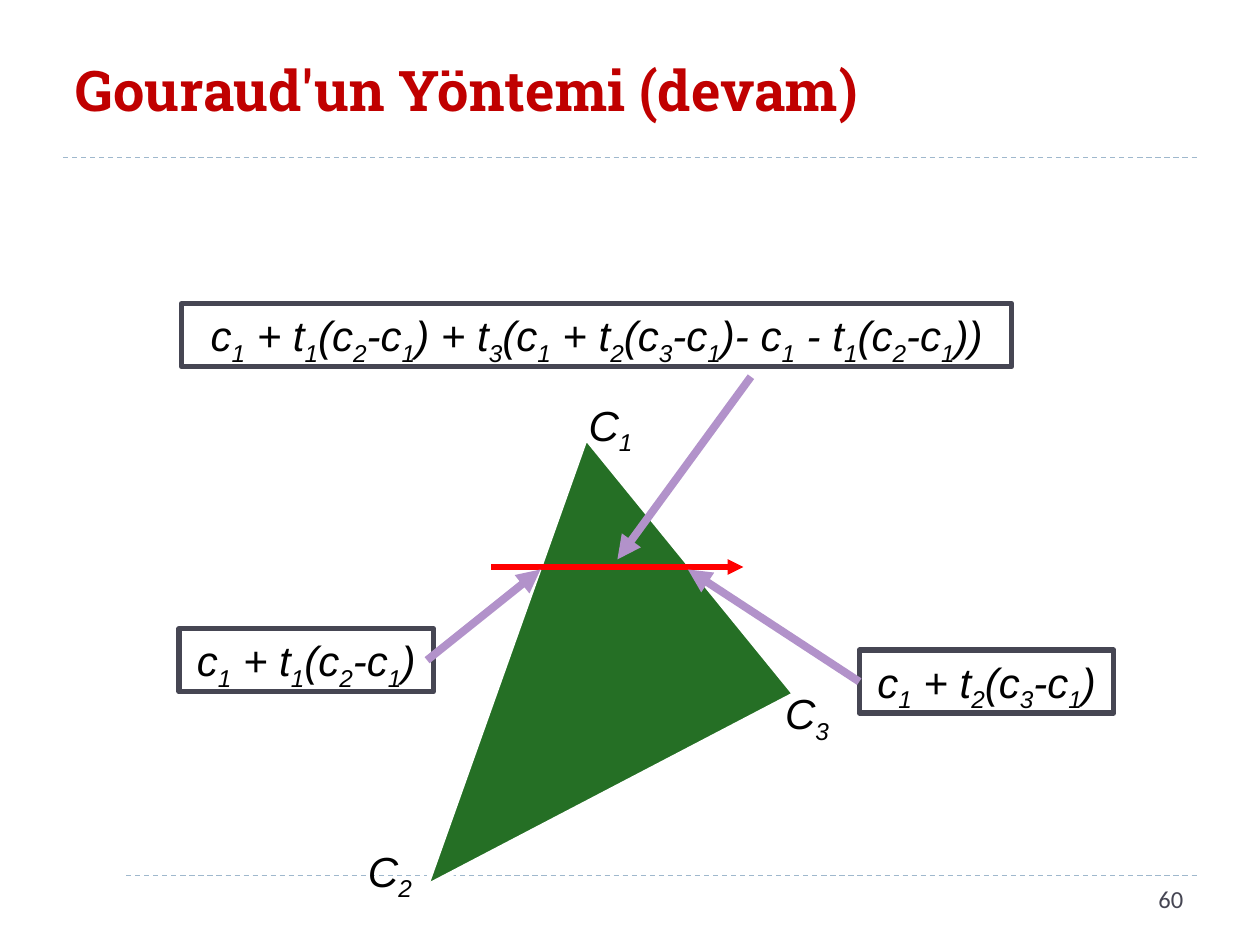
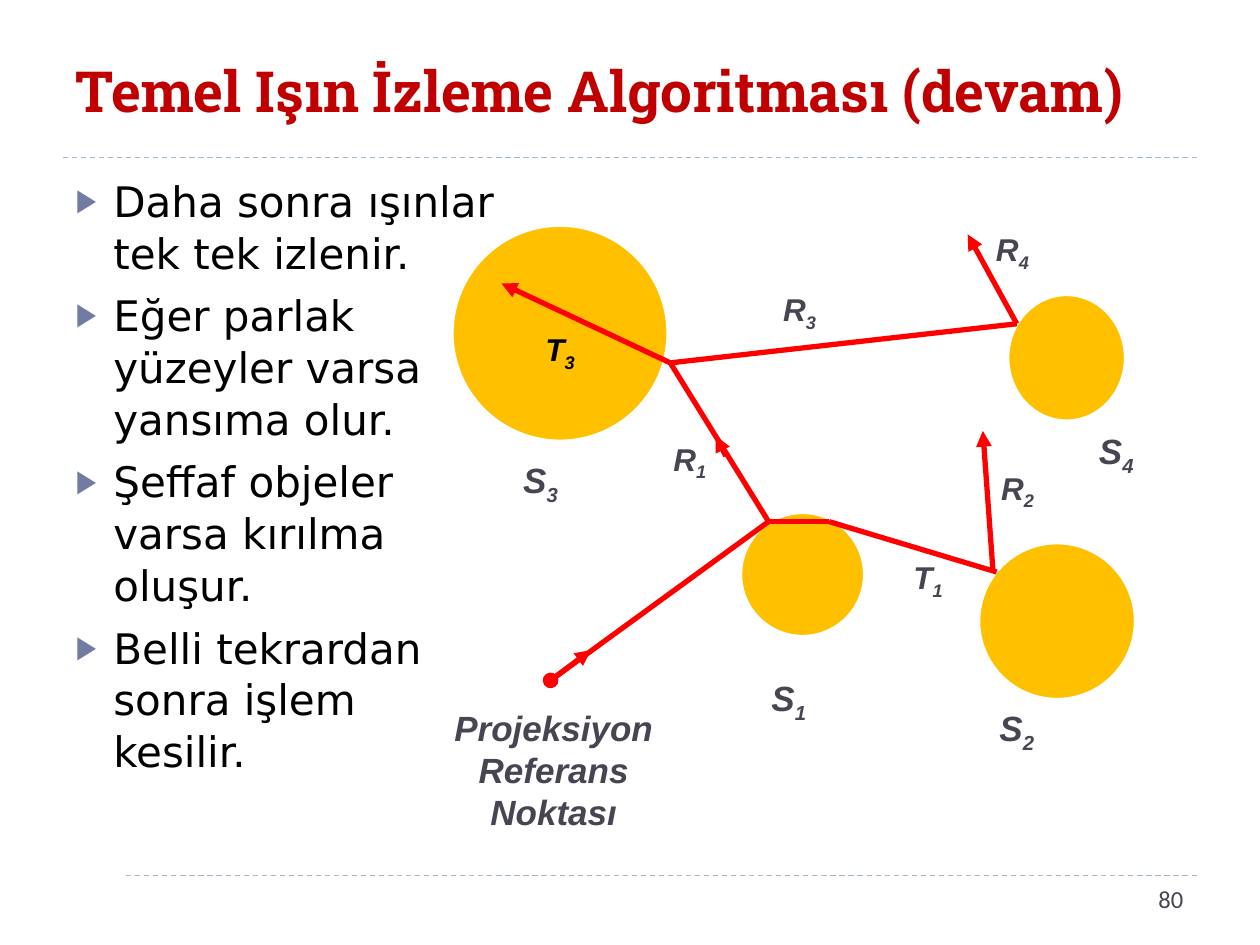
"""Build two computer graphics slides: Gouraud shading and basic ray tracing."""
import pptx
import pptx.util
import pptx.dml.color
import pptx.enum.dml
import pptx.enum.shapes
import pptx.enum.text
import pptx.oxml.ns
import lxml.etree

Inches, Pt = pptx.util.Inches, pptx.util.Pt
RGB = pptx.dml.color.RGBColor.from_string
SHAPE = pptx.enum.shapes.MSO_SHAPE
ALIGN = pptx.enum.text.PP_ALIGN
ANCHOR = pptx.enum.text.MSO_ANCHOR
qn = pptx.oxml.ns.qn
C = {"title": "C00000", "rule": "9FB8CD", "white": "FFFFFF", "slate": "464653",
     "black": "000000", "green": "256F25", "ray": "FF0000", "pointer": "B292CA",
     "sphere": "FFC000", "bullet": "727CA3"}


def write(sp, text, size, color="slate", font="Arial", bold=False, italic=False,
          align=ALIGN.CENTER, wrap=True):
    """Write text run by run; the character after each underscore is a subscript."""
    tf = sp.text_frame
    tf.word_wrap = wrap
    tf.auto_size = pptx.enum.text.MSO_AUTO_SIZE.NONE
    p = tf.paragraphs[0]
    p.alignment = align
    first, *rest = text.split("_")
    parts = [(first, False)]
    for part in rest:
        parts += [(part[0], True), (part[1:], False)]
    for part, lowered in parts:
        if part:
            r = p.add_run()
            r.text = part
            r.font.size, r.font.name = Pt(size), font
            r.font.bold, r.font.italic = bold, italic
            r.font.color.rgb = RGB(C[color])
            if lowered:
                r.font._element.set("baseline", "-25000")


def draw_line(s, start, end, color, width, head=None, tail=None):
    """Draw a straight line with optional end marks and return it."""
    ends = [Inches(v) for v in (*start, *end)]
    cn = s.shapes.add_connector(pptx.enum.shapes.MSO_CONNECTOR.STRAIGHT, *ends)
    cn.line.color.rgb = RGB(C[color])
    cn.line.width = Pt(width)
    ln = cn.line._get_or_add_ln()
    for tag, mark in (("a:headEnd", head), ("a:tailEnd", tail)):
        if mark:
            lxml.etree.SubElement(ln, qn(tag)).set("type", mark)
    lxml.etree.SubElement(cn._element.spPr, qn("a:effectLst"))
    return cn


prs = pptx.Presentation()
prs.slide_width, prs.slide_height = Inches(10), Inches(7.5)

pages = [("Gouraud'un Yöntemi (devam)", 32, "60", 5),
         ("Temel Işın İzleme Algoritması (devam)", 32.4, "80", 1)]
slides = []
for title, size, number, layout in pages:
    s = prs.slides.add_slide(prs.slide_layouts[layout])
    slides.append(s)
    for y in (6.95, 1.25):
        rule = draw_line(s, (0.5, y), (9.5, y), "rule", 0.75)
        rule.line.dash_style = pptx.enum.dml.MSO_LINE.DASH
    corner = s.shapes.add_shape(SHAPE.RECTANGLE, Inches(0.35), Inches(6.82),
                                Inches(0.63), Inches(0.63))
    corner.shadow.inherit = False
    corner.fill.solid()
    corner.fill.fore_color.rgb = RGB(C["white"])
    corner.line.fill.background()
    sp = s.shapes.title
    sp.left, sp.top, sp.width, sp.height = [Inches(v) for v in (0.5, 0.17, 9, 1.08)]
    write(sp, title, size, "title", "Roboto Slab", bold=True, align=ALIGN.LEFT)
    sp.text_frame.vertical_anchor = ANCHOR.MIDDLE
    sp = s.shapes.add_textbox(Inches(7.16), Inches(6.97), Inches(2.33), Inches(0.4))
    write(sp, number, 14, font="Calibri", align=ALIGN.RIGHT)

gouraud, tracing = slides

s = gouraud
corners = [(Inches(x), Inches(y)) for x, y in ((3.38, 7.04), (4.65, 3.47), (6.31, 5.51))]
builder = s.shapes.build_freeform(*corners[0])
builder.add_line_segments(corners[1:], close=True)
triangle = builder.convert_to_shape()
triangle.shadow.inherit = False
triangle.fill.solid()
triangle.fill.fore_color.rgb = RGB(C["green"])
triangle.line.color.rgb = RGB(C["white"])
triangle.line.width = Pt(3)

for text, x, y, w in (("C_1", 4.5, 3.12, 0.69), ("C_2", 2.81, 6.66, 0.57),
                      ("C_3", 6.12, 5.41, 0.57)):
    sp = s.shapes.add_textbox(Inches(x), Inches(y), Inches(w), Inches(0.5))
    write(sp, text, 24, "black", italic=True, wrap=False)

draw_line(s, (3.9, 4.5), (5.9, 4.5), "ray", 3, tail="triangle")

formulas = [
    ("c_1 + t_1(c_2-c_1)", 1.42, 4.99, 2.02),
    ("c_1 + t_2(c_3-c_1)", 6.82, 5.16, 2.02),
    ("c_1 + t_1(c_2-c_1) + t_3(c_1 + t_2(c_3-c_1)- c_1 - t_1(c_2-c_1))", 1.44, 2.41, 6.59)]
for text, x, y, w in formulas:
    sp = s.shapes.add_shape(SHAPE.RECTANGLE, Inches(x), Inches(y), Inches(w), Inches(0.5))
    sp.shadow.inherit = False
    sp.fill.background()
    sp.line.color.rgb = RGB(C["slate"])
    sp.line.width = Pt(3)
    sp.text_frame.vertical_anchor = ANCHOR.TOP
    write(sp, text, 24, "black", italic=True, wrap=False)

for start, end in (((6.82, 5.41), (5.46, 4.52)), ((5.96, 2.99), (4.9, 4.44)),
                   ((3.39, 5.24), (4.29, 4.52))):
    draw_line(s, start, end, "pointer", 4.5, tail="triangle")

s = tracing
body = s.placeholders[1]
body.left, body.top, body.width, body.height = [Inches(v) for v in (0.5, 1.33, 9, 5.4)]
tf = body.text_frame
tf.auto_size = pptx.enum.text.MSO_AUTO_SIZE.NONE
items = [("Daha sonra ışınlar", "tek tek izlenir."),
         ("Eğer parlak", "yüzeyler varsa", "yansıma olur."),
         ("Şeffaf objeler", "varsa kırılma", "oluşur."),
         ("Belli tekrardan", "sonra işlem", "kesilir.")]
for i, rows in enumerate(items):
    p = tf.add_paragraph() if i else tf.paragraphs[0]
    p.space_before = Pt(6)
    p.line_spacing = 1.03
    pPr = p._p.get_or_add_pPr()
    pPr.set("marL", str(Inches(0.3)))
    pPr.set("indent", str(-Inches(0.3)))
    color = lxml.etree.SubElement(pPr, qn("a:buClr"))
    lxml.etree.SubElement(color, qn("a:srgbClr")).set("val", C["bullet"])
    lxml.etree.SubElement(pPr, qn("a:buSzPct")).set("val", "76000")
    lxml.etree.SubElement(pPr, qn("a:buChar")).set("char", "▶")
    for j, row in enumerate(rows):
        if j:
            p.add_line_break()
        r = p.add_run()
        r.text = row
        r.font.size, r.font.name = Pt(24), "DejaVu Sans"
        r.font.color.rgb = RGB(C["black"])

for x, y, w, h in ((3.58, 1.78, 1.73, 1.73), (7.99, 2.33, 0.95, 1.02),
                   (7.76, 4.3, 1.26, 1.26), (5.87, 4.06, 1, 1)):
    sphere = s.shapes.add_shape(SHAPE.OVAL, Inches(x), Inches(y), Inches(w), Inches(h))
    sphere.shadow.inherit = False
    sphere.fill.solid()
    sphere.fill.fore_color.rgb = RGB(C["sphere"])
    sphere.line.color.rgb = RGB(C["white"])
    sphere.line.width = Pt(3)

eye, enter, leave = (4.37, 5.4), (6.1, 4.14), (6.58, 4.14)
hit3, hit4 = (5.32, 2.88), (8.07, 2.57)
rays = [(eye, enter, None, None), (enter, leave, None, None),
        (leave, (7.91, 4.54), None, None), ((7.88, 4.52), (7.8, 3.42), None, "triangle"),
        (enter, hit3, None, None), (hit3, (3.98, 2.25), None, "triangle"),
        (hit3, hit4, None, None), (hit4, (7.68, 1.86), None, "triangle"),
        (eye, (4.69, 5.16), "oval", "triangle"),
        ((5.76, 3.62), (5.68, 3.46), None, "triangle")]
for start, end, head, tail in rays:
    draw_line(s, start, end, "ray", 3, head, tail)

sphere_names = [("S_1", 5.79, 5.32), ("S_2", 7.6, 5.56), ("S_4", 8.39, 3.36),
                ("S_3", 3.82, 3.59)]
ray_names = [("R_1", 5.08, 3.44), ("R_3", 5.95, 2.25), ("R_4", 7.64, 1.78),
             ("T_3", 4.05, 2.57), ("T_1", 6.97, 4.38), ("R_2", 7.68, 3.67)]
eye_name = [("Projeksiyon Referans Noktası", 3.43, 5.56)]
for names, w, h, size in ((sphere_names, 0.94, 0.43, 20), (ray_names, 0.79, 0.4, 18),
                          (eye_name, 1.93, 1.11, 20)):
    for text, x, y in names:
        sp = s.shapes.add_textbox(Inches(x), Inches(y), Inches(w), Inches(h))
        write(sp, text, size, "black" if text == "T_3" else "slate", bold=True, italic=True)

prs.save("out.pptx")
